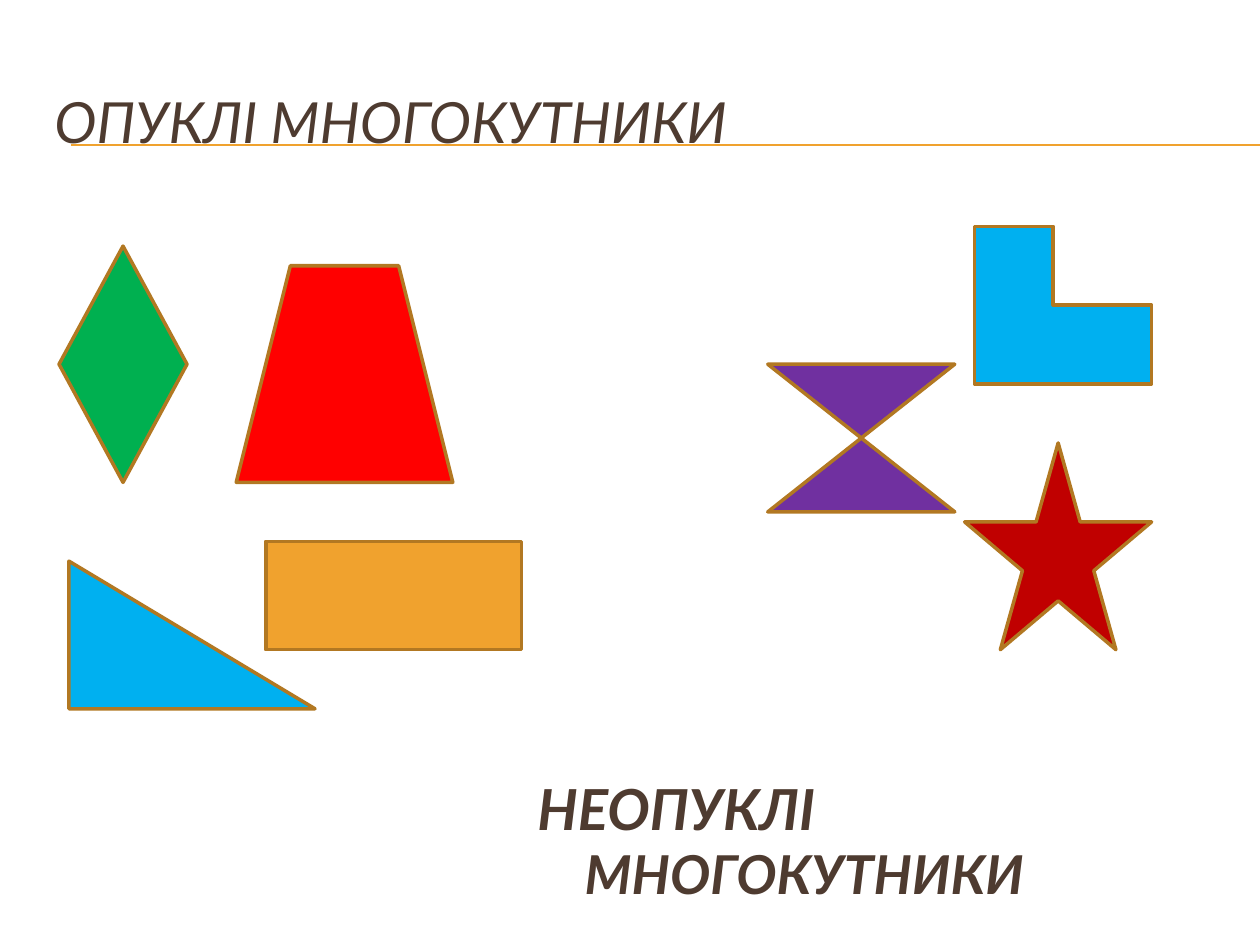
"""Build a slide that contrasts convex and non-convex polygons."""
from dataclasses import dataclass

from lxml import etree
from pptx import Presentation
from pptx.dml.color import RGBColor
from pptx.enum.shapes import MSO_CONNECTOR, MSO_SHAPE
from pptx.enum.text import MSO_ANCHOR
from pptx.oxml.ns import qn
from pptx.util import Pt

STRAIGHT = MSO_CONNECTOR.STRAIGHT
TOP, MIDDLE = MSO_ANCHOR.TOP, MSO_ANCHOR.MIDDLE
DIAMOND, TRAPEZOID = MSO_SHAPE.DIAMOND, MSO_SHAPE.TRAPEZOID
TRIANGLE, RECTANGLE = MSO_SHAPE.RIGHT_TRIANGLE, MSO_SHAPE.RECTANGLE
CORNER, HOURGLASS = MSO_SHAPE.CORNER, MSO_SHAPE.FLOWCHART_COLLATE
STAR = MSO_SHAPE.STAR_5_POINT

WIDTH, HEIGHT = 720, 540
FONT, BROWN = "Lato", "4E3B30"
GOLD, OUTLINE = "F0A22E", "B27822"
SKY = "00B0F0"


@dataclass(frozen=True)
class Polygon:
    kind: MSO_SHAPE
    left: float
    top: float
    width: float
    height: float
    fill: str


@dataclass(frozen=True)
class Span:
    text: str
    size: float
    bold: bool = False


@dataclass(frozen=True)
class Caption:
    left: float
    top: float
    width: float
    height: float
    anchor: MSO_ANCHOR
    spans: tuple[Span, ...]
    hanging: float = 0


POLYGONS = (
    Polygon(DIAMOND, 33.75, 140.63, 73.13, 135, "00B050"),
    Polygon(TRAPEZOID, 135, 151.88, 123.75, 123.75, "FF0000"),
    Polygon(TRIANGLE, 39.38, 320.63, 140.63, 84.38, SKY),
    Polygon(RECTANGLE, 151.88, 309.38, 146.25, 61.88, GOLD),
    Polygon(CORNER, 556.88, 129.38, 101.25, 90, SKY),
    Polygon(HOURGLASS, 438.75, 208.13, 106.88, 84.38, "7030A0"),
    Polygon(STAR, 551.25, 253.13, 106.88, 118.13, "C00000"),
)
CAPTIONS = (
    Caption(24, 36, 403, 66, MIDDLE, (Span("ОПУКЛІ МНОГОКУТНИКИ", 32.4),)),
    Caption(300, 438.5, 420, 56, TOP, (
        Span("НЕОПУКЛІ", 32.3, True),
        Span(" ", 27.2, True),
        Span("МНОГОКУТНИКИ", 30.6, True),
    ), 27),
)
RULE_LEFT, RULE_TOPS = 40.5, (82.8, 83.3)


def color(code: str) -> RGBColor:
    return RGBColor.from_string(code)


def apply(target, values: dict) -> None:
    for name, value in values.items():
        setattr(target, name, value)


def draw_rule(page, top: float) -> None:
    rule = page.shapes.add_connector(
        STRAIGHT, Pt(RULE_LEFT), Pt(top), Pt(WIDTH), Pt(top))
    rule.line.width = Pt(0.75)
    rule.line.color.rgb = color(GOLD)
    etree.SubElement(rule._element.spPr, qn("a:effectLst"))


def draw_caption(page, caption: Caption) -> None:
    box = page.shapes.add_textbox(
        Pt(caption.left), Pt(caption.top), Pt(caption.width), Pt(caption.height))
    apply(box.text_frame, {"word_wrap": True, "vertical_anchor": caption.anchor})
    para = box.text_frame.paragraphs[0]
    if caption.hanging:
        properties = para._p.get_or_add_pPr()
        properties.set("marL", str(Pt(caption.hanging)))
        properties.set("indent", str(-Pt(caption.hanging)))
    for span in caption.spans:
        run = para.add_run()
        run.text = span.text
        apply(run.font, {"name": FONT, "size": Pt(span.size),
                         "bold": span.bold, "italic": True})
        run.font.color.rgb = color(BROWN)


def draw_polygon(page, polygon: Polygon) -> None:
    shape = page.shapes.add_shape(
        polygon.kind, Pt(polygon.left), Pt(polygon.top),
        Pt(polygon.width), Pt(polygon.height))
    shape.shadow.inherit = False
    shape.fill.solid()
    shape.fill.fore_color.rgb = color(polygon.fill)
    shape.line.width = Pt(2)
    shape.line.color.rgb = color(OUTLINE)


def main() -> None:
    deck = Presentation()
    apply(deck, {"slide_width": Pt(WIDTH), "slide_height": Pt(HEIGHT)})
    page = deck.slides.add_slide(deck.slide_layouts[6])
    for top in RULE_TOPS:
        draw_rule(page, top)
    for caption in CAPTIONS:
        draw_caption(page, caption)
    for polygon in POLYGONS:
        draw_polygon(page, polygon)
    deck.save("out.pptx")


if __name__ == "__main__":
    main()
